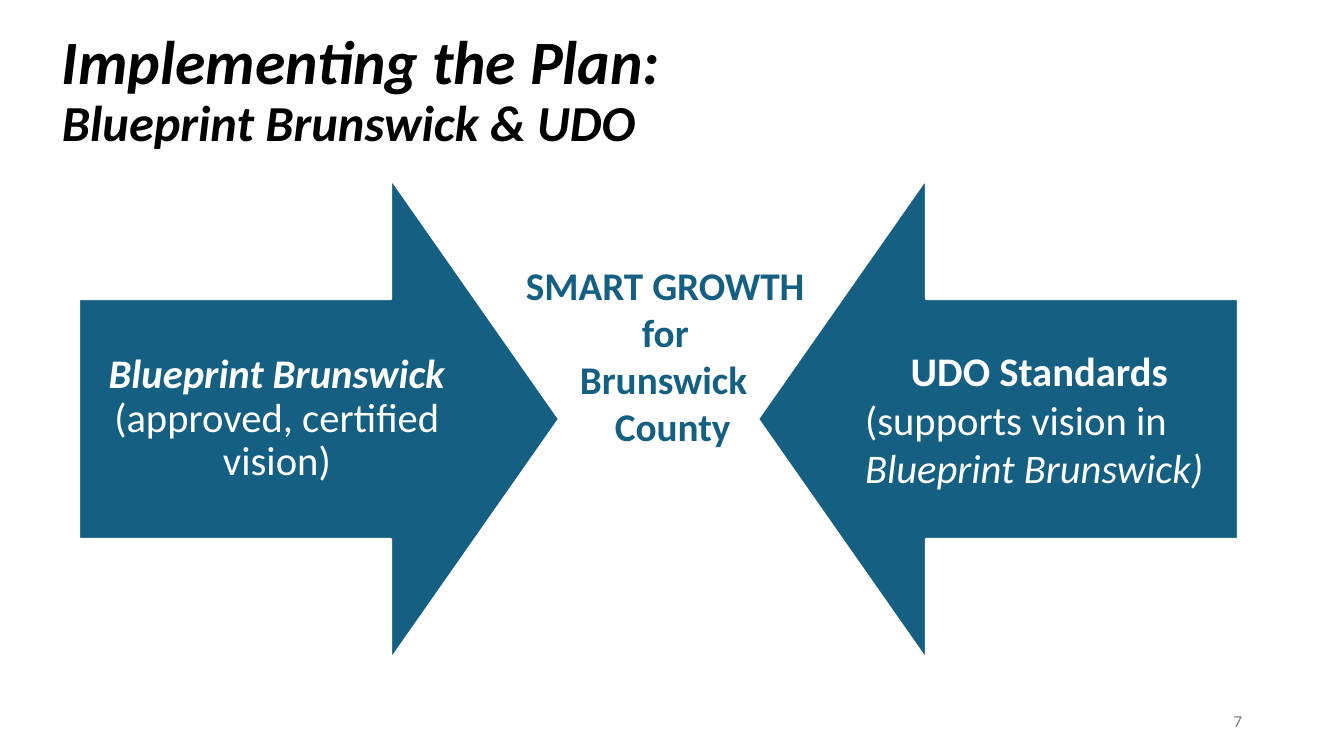
from pptx import Presentation
from pptx.dml.color import RGBColor
from pptx.enum.shapes import MSO_SHAPE as Preset
from pptx.enum.text import MSO_ANCHOR as Anchor, PP_ALIGN as Align
from pptx.util import Emu, Pt

BLACK = RGBColor(0x00, 0x00, 0x00)
WHITE = RGBColor(0xFF, 0xFF, 0xFF)
TEAL = RGBColor(0x15, 0x60, 0x82)
GRAY = RGBColor(0x79, 0x79, 0x79)


def px(length):
    return Emu(round(length * 914400 / 100.8))


class SlideBuilder:
    font_name = "Calibri"

    def __init__(self, deck):
        self.slide = deck.slides.add_slide(deck.slide_layouts[6])

    def arrow(self, left, top, size, rotation):
        arrow = self.slide.shapes.add_shape(
            Preset.DOWN_ARROW, px(left), px(top), px(size), px(size))
        arrow.rotation = rotation
        arrow.adjustments[0] = 0.5
        arrow.adjustments[1] = 0.35
        arrow.shadow.inherit = False
        arrow.fill.solid()
        arrow.fill.fore_color.rgb = TEAL
        arrow.line.color.rgb = WHITE
        arrow.line.width = Pt(1.5)

    def text(self, box, size, color, anchor=Anchor.MIDDLE, inset=None, wrap=True):
        frame = self.slide.shapes.add_textbox(*map(px, box)).text_frame
        frame.word_wrap = wrap
        frame.vertical_anchor = anchor
        if inset is not None:
            frame.margin_left = frame.margin_right = px(inset)
            frame.margin_top = frame.margin_bottom = px(inset)

        def paragraph(*runs, align=Align.LEFT, indent=0, spacing=None, **style):
            line = frame.paragraphs[0]
            if line.runs:
                line = frame.add_paragraph()
            line.alignment = align
            line.line_spacing = spacing
            if indent:
                line._p.get_or_add_pPr().set("marL", str(px(indent)))
            self.style(line.font, size=Pt(size), name=self.font_name, **style)
            line.font.color.rgb = color
            for words, run_style in runs:
                if words == "\n":
                    line.add_line_break()
                    continue
                run = line.add_run()
                run.text = words
                self.style(run.font, **run_style)

        return paragraph

    def style(self, font, **style):
        for key, value in style.items():
            setattr(font, key, value)


def main():
    deck = Presentation()
    deck.slide_width, deck.slide_height = px(1344), px(756)
    page = SlideBuilder(deck)

    title = page.text((52, 19, 1214, 146), 44, BLACK)
    title(("Implementing the Plan:", {}), ("\n", {}),
          ("Blueprint Brunswick & UDO", {"size": Pt(36)}),
          spacing=0.9, bold=True, italic=True)

    page.arrow(79, 179, 480, 270)
    vision = page.text((79, 299, 396, 240), 29, WHITE, inset=23)
    vision(("Blueprint Brunswick ", {"bold": True, "italic": True}),
           ("(approved, certified vision)", {}),
           align=Align.CENTER, spacing=0.9)

    page.arrow(758, 179, 480, 90)
    standards = page.text((842, 299, 395, 240), 29, WHITE, inset=23)
    standards(("UDO Standards", {}), align=Align.CENTER, bold=True)
    standards(("(supports vision in ", {}),
              ("Blueprint Brunswick)", {"italic": True}))

    page_number = page.text((950, 701, 302, 40), 12, GRAY)
    page_number(("7", {}), align=Align.RIGHT)

    goal = page.text((516, 256, 311, 201), 28, TEAL, Anchor.TOP, wrap=False)
    for words, indent in (("SMART GROWTH", 0), ("for", 116),
                          ("Brunswick", 54), ("County", 89)):
        goal((words, {}), indent=indent, bold=True)

    deck.save("out.pptx")


if __name__ == "__main__":
    main()
